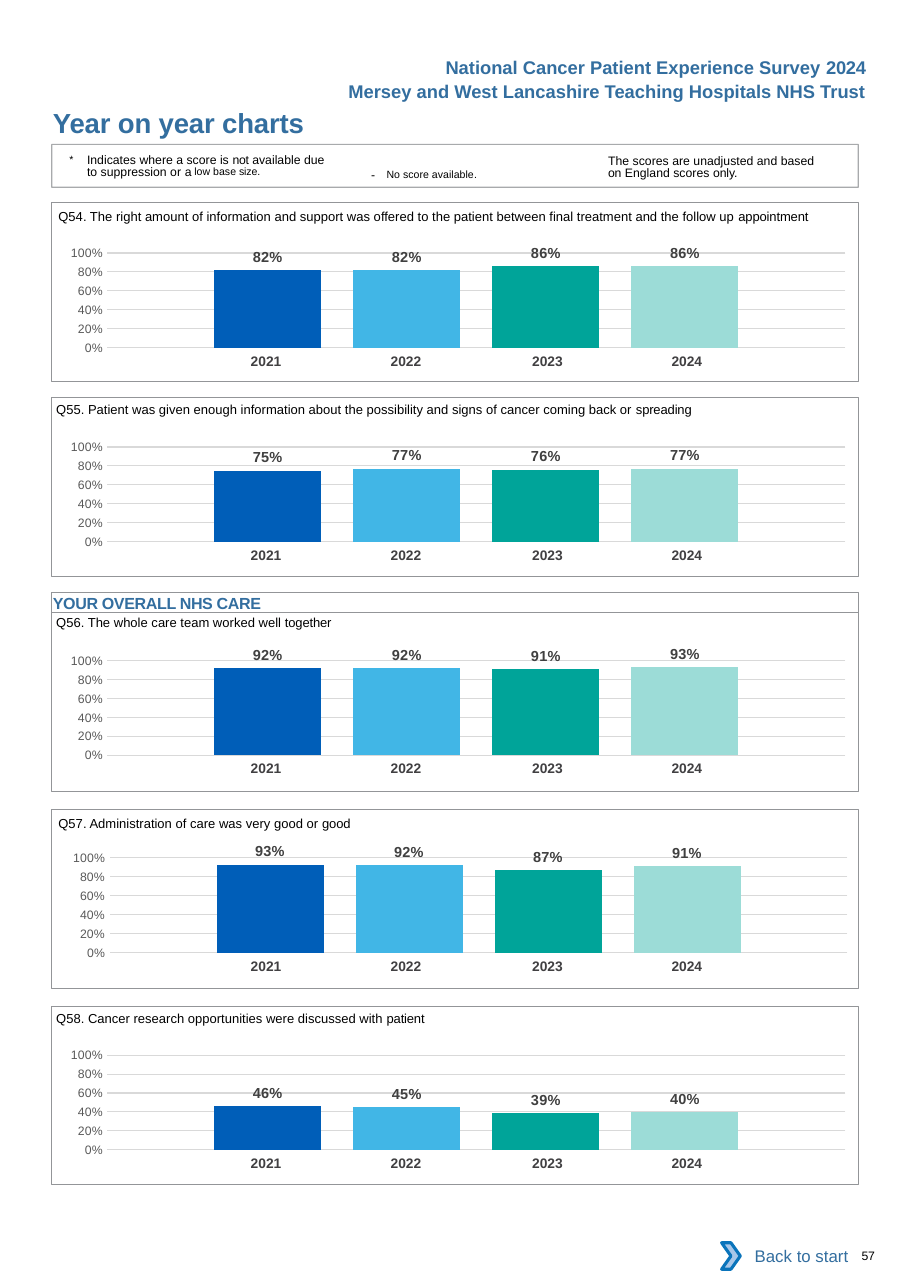
from dataclasses import dataclass
from typing import Optional

from lxml.etree import SubElement
from pptx import Presentation
from pptx.chart.data import CategoryChartData
from pptx.dml.color import RGBColor
from pptx.enum.chart import XL_CHART_TYPE, XL_LABEL_POSITION, XL_TICK_MARK
from pptx.enum.shapes import MSO_SHAPE
from pptx.enum.text import MSO_ANCHOR, PP_ALIGN
from pptx.oxml import parse_xml
from pptx.oxml.ns import nsdecls, qn
from pptx.util import Emu, Pt

EMU_PER_PX = 9144


def px(n: int) -> Emu:
    return Emu(n * EMU_PER_PX)


@dataclass(frozen=True)
class Theme:
    font: str = "Arial"
    chart_font: str = "Calibri"
    heading: str = "336E9F"
    text: str = "000000"
    frame: str = "939598"
    year: str = "414042"
    axis: str = "595959"
    label: str = "404040"
    grid: str = "D9D9D9"
    white: str = "FFFFFF"
    arrow_fill: str = "A8C7E9"
    arrow_line: str = "0A74BB"
    bars: tuple = ("005EB8", "41B6E6", "00A499", "9CDCD7")
    title_pt: float = 18
    header_pt: float = 12
    section_pt: float = 10.5
    link_pt: float = 11
    question_pt: float = 8.5
    note_pt: float = 8
    raised_pt: float = 12
    year_pt: float = 9
    label_pt: float = 9.5
    chart_pt: float = 10


THEME = Theme()


@dataclass(frozen=True)
class Run:
    text: str
    size: float
    color: str = THEME.text
    bold: bool = False
    spacing: int = 0
    raised: int = 0


@dataclass(frozen=True)
class Box:
    x: int
    y: int
    w: int
    h: int

    def emu(self) -> tuple:
        return px(self.x), px(self.y), px(self.w), px(self.h)


@dataclass(frozen=True)
class Question:
    text: str
    last_word: str
    text_x: int
    text_y: int
    chart_x: int
    chart_y: int
    frame_y: int
    scores: tuple


YEARS = ("2021", "2022", "2023", "2024")
YEAR_WIDTHS = (127, 127, 134, 127)
YEAR_RIGHT_INSETS = (0, 0, 4, 12)
QUESTIONS = (
    Question("Q54. The right amount of information and support was offered to the patient between final treatment "
             "and the follow up ", "appointment", 53, 180, 39, 211, 184, (0.82, 0.82, 0.86, 0.86)),
    Question("Q55. Patient was given enough information about the possibility and signs of cancer coming back or ",
             "spreading", 51, 355, 39, 387, 361, (0.75, 0.77, 0.76, 0.77)),
    Question("Q56. The whole care team worked well ", "together", 51, 549, 39, 581, 556, (0.92, 0.92, 0.91, 0.93)),
    Question("Q57. Administration of care was very good or ", "good", 53, 731, 41, 760, 735, (0.93, 0.92, 0.87, 0.91)),
    Question("Q58. Cancer research opportunities were discussed with ", "patient", 51, 908, 39, 939, 913,
             (0.46, 0.45, 0.39, 0.4)),
)


def rgb(color: str) -> RGBColor:
    return RGBColor.from_string(color)


def set_font(font, size: float, color: str, bold: bool = False, name: str = THEME.font) -> None:
    font.name, font.size, font.bold = name, Pt(size), bold
    font.color.rgb = rgb(color)


def write(tf, runs: tuple, insets: tuple = (0, 0, 0, 0), align=PP_ALIGN.LEFT, anchor=MSO_ANCHOR.TOP,
          wrap: bool = True, leading: Optional[float] = None, hanging: int = 0) -> None:
    tf.margin_left, tf.margin_top, tf.margin_right, tf.margin_bottom = map(px, insets)
    tf.word_wrap, tf.vertical_anchor = wrap, anchor
    p = tf.paragraphs[0]
    p.alignment, p.space_before = align, Pt(0)
    if leading:
        p.line_spacing = Pt(leading)
    if hanging:
        pPr = p._p.get_or_add_pPr()
        pPr.set("marL", str(px(hanging)))
        pPr.set("indent", str(-px(hanging)))
    for run in runs:
        r = p.add_run()
        r.text = run.text
        set_font(r.font, run.size, run.color, run.bold)
        rPr = r._r.get_or_add_rPr()
        if run.spacing:
            rPr.set("spc", str(run.spacing))
        if run.raised:
            rPr.set("baseline", str(run.raised * 1000))


def add_text(slide, box: Box, *runs: Run, **layout) -> None:
    write(slide.shapes.add_textbox(*box.emu()).text_frame, runs, **layout)


def add_box(slide, box: Box, fill: Optional[str] = None, line: Optional[str] = None, width: float = 0.5,
            kind=MSO_SHAPE.RECTANGLE):
    sp = slide.shapes.add_shape(kind, *box.emu())
    sp.shadow.inherit = False
    if fill:
        sp.fill.solid()
        sp.fill.fore_color.rgb = rgb(fill)
    else:
        sp.fill.background()
    if line:
        sp.line.color.rgb = rgb(line)
        sp.line.width = Pt(width)
    else:
        sp.line.fill.background()
    return sp


def add_years(slide, y: int) -> None:
    table = slide.shapes.add_table(1, len(YEARS), *Box(173, y, sum(YEAR_WIDTHS), 27).emu()).table
    table.first_row = table.horz_banding = False
    table._tbl.tblPr.find(qn("a:tableStyleId")).text = "{2D5ABB26-0587-4C30-8999-92F81FD0307C}"
    for i, (year, width, right) in enumerate(zip(YEARS, YEAR_WIDTHS, YEAR_RIGHT_INSETS)):
        table.columns[i].width = px(width)
        cell = table.cell(0, i)
        cell.fill.background()
        cell.margin_left, cell.margin_top, cell.margin_right, cell.margin_bottom = map(px, (10, 5, right, 5))
        p = cell.text_frame.paragraphs[0]
        p.alignment = PP_ALIGN.CENTER
        r = p.add_run()
        r.text = year
        set_font(r.font, THEME.year_pt, THEME.year, True)


def add_scores(slide, box: Box, scores: tuple) -> None:
    data = CategoryChartData(number_format="0%")
    data.categories = ["1"]
    for i, score in enumerate(scores, 1):
        data.add_series(f"Series {i}", [score])
    chart = slide.shapes.add_chart(XL_CHART_TYPE.COLUMN_CLUSTERED, *box.emu(), data).chart
    chart.has_legend = chart.has_title = False
    set_font(chart.font, THEME.chart_pt, THEME.text, name=THEME.chart_font)
    chart.category_axis.visible = False
    axis = chart.value_axis
    axis.minimum_scale, axis.maximum_scale, axis.major_unit = 0, 1, 0.2
    axis.major_tick_mark = axis.minor_tick_mark = XL_TICK_MARK.NONE
    axis.format.line.fill.background()
    axis.major_gridlines.format.line.color.rgb = rgb(THEME.grid)
    axis.major_gridlines.format.line.width = Pt(0.75)
    axis.tick_labels.number_format, axis.tick_labels.number_format_is_linked = "0%", False
    set_font(axis.tick_labels.font, THEME.note_pt, THEME.axis)
    plot = chart.plots[0]
    plot.gap_width, plot.overlap, plot.vary_by_categories = 200, -30, False
    for series, color in zip(plot.series, THEME.bars):
        series.format.fill.solid()
        series.format.fill.fore_color.rgb = rgb(color)
        labels = series.data_labels
        labels.show_value, labels.position = True, XL_LABEL_POSITION.OUTSIDE_END
        labels.number_format, labels.number_format_is_linked = "0%", False
        set_font(labels.font, THEME.label_pt, THEME.label, True)
    area = chart._chartSpace.chart.plotArea
    for old in area.findall(qn("c:layout")):
        area.remove(old)
    area.insert(0, parse_xml(
        f'<c:layout {nsdecls("c")}><c:manualLayout><c:layoutTarget val="inner"/><c:xMode val="edge"/>'
        '<c:yMode val="edge"/><c:x val="0.08"/><c:y val="0.145"/><c:w val="0.915"/><c:h val="0.666"/>'
        '</c:manualLayout></c:layout>'))


def add_question(slide, q: Question) -> None:
    add_text(slide, Box(q.text_x, q.text_y, 725, 24), Run(q.text, THEME.question_pt),
             Run(q.last_word, THEME.question_pt, spacing=-10), insets=(0, 9, 0, 0))
    add_years(slide, q.chart_y + 105)
    add_scores(slide, Box(q.chart_x, q.chart_y, 732, 129), q.scores)
    add_box(slide, Box(47, q.frame_y, 732, 162), line=THEME.frame)


def add_notes(slide) -> None:
    small, raised = THEME.note_pt, THEME.raised_pt
    add_text(slide, Box(552, 138, 195, 27), Run("The scores are unadjusted and based", small),
             Run(" on", small, spacing=-20), Run(" England scores ", small), Run("only.", small, spacing=-10),
             insets=(0, 3, 0, 0), leading=8.1)
    add_text(slide, Box(327, 141, 183, 24), Run("- ", small, spacing=260),
             Run("No score available", raised, raised=3), Run(".", raised, spacing=-10, raised=3),
             insets=(10, 5, 10, 5))
    add_text(slide, Box(63, 138, 238, 27), Run("*\t", raised, raised=3), Run("Indicates where a score is ", small),
             Run("not ", small, spacing=-20), Run("available due to suppression or ", small),
             Run("a ", small, spacing=-50), Run("low base", raised, raised=7),
             Run(" size.", raised, spacing=-10, raised=7), insets=(0, 3, 0, 0), leading=8.1, hanging=16)
    frame = add_box(slide, Box(47, 131, 732, 39), line=THEME.frame, width=0.75)
    color = frame.line._ln.find(qn("a:solidFill"))[0]
    SubElement(color, qn("a:alpha")).set("val", "80000")


def main() -> None:
    prs = Presentation()
    prs.slide_width, prs.slide_height = px(826), px(1169)
    slide = prs.slides.add_slide(prs.slide_layouts[5])
    title = slide.shapes.title
    title.left, title.top, title.width, title.height = Box(48, 96, 449, 30).emu()
    write(title.text_frame, (Run("Year on year charts", THEME.title_pt, THEME.heading, True, -10),))
    header = dict(insets=(10, 5, 10, 5), align=PP_ALIGN.RIGHT, wrap=False)
    add_text(slide, Box(392, 46, 404, 30),
             Run("National Cancer Patient Experience Survey ", THEME.header_pt, THEME.heading, True),
             Run("2024", THEME.header_pt, THEME.heading, True, -20), **header)
    add_text(slide, Box(299, 68, 497, 30), Run("Mersey and West Lancashire Teaching Hospitals NHS Trust",
                                              THEME.header_pt, THEME.heading, True), **header)
    add_notes(slide)
    section = add_box(slide, Box(47, 538, 732, 18), line=THEME.frame)
    write(section.text_frame, (Run("YOUR OVERALL NHS CARE", THEME.section_pt, THEME.heading, True, -20),),
          insets=(1, 1, 0, 0))
    for q in QUESTIONS:
        add_question(slide, q)
    link = add_box(slide, Box(662, 1119, 118, 42), fill=THEME.white)
    write(link.text_frame, (Run("Back to start", THEME.link_pt, THEME.heading),), insets=(10, 5, 10, 5),
          align=PP_ALIGN.RIGHT, anchor=MSO_ANCHOR.MIDDLE)
    add_box(slide, Box(655, 1128, 17, 24), THEME.arrow_fill, THEME.arrow_line, 2, MSO_SHAPE.CHEVRON)
    add_text(slide, Box(782, 1133, 41, 13), Run("57", THEME.note_pt, spacing=-20))
    prs.save("out.pptx")


if __name__ == "__main__":
    main()
